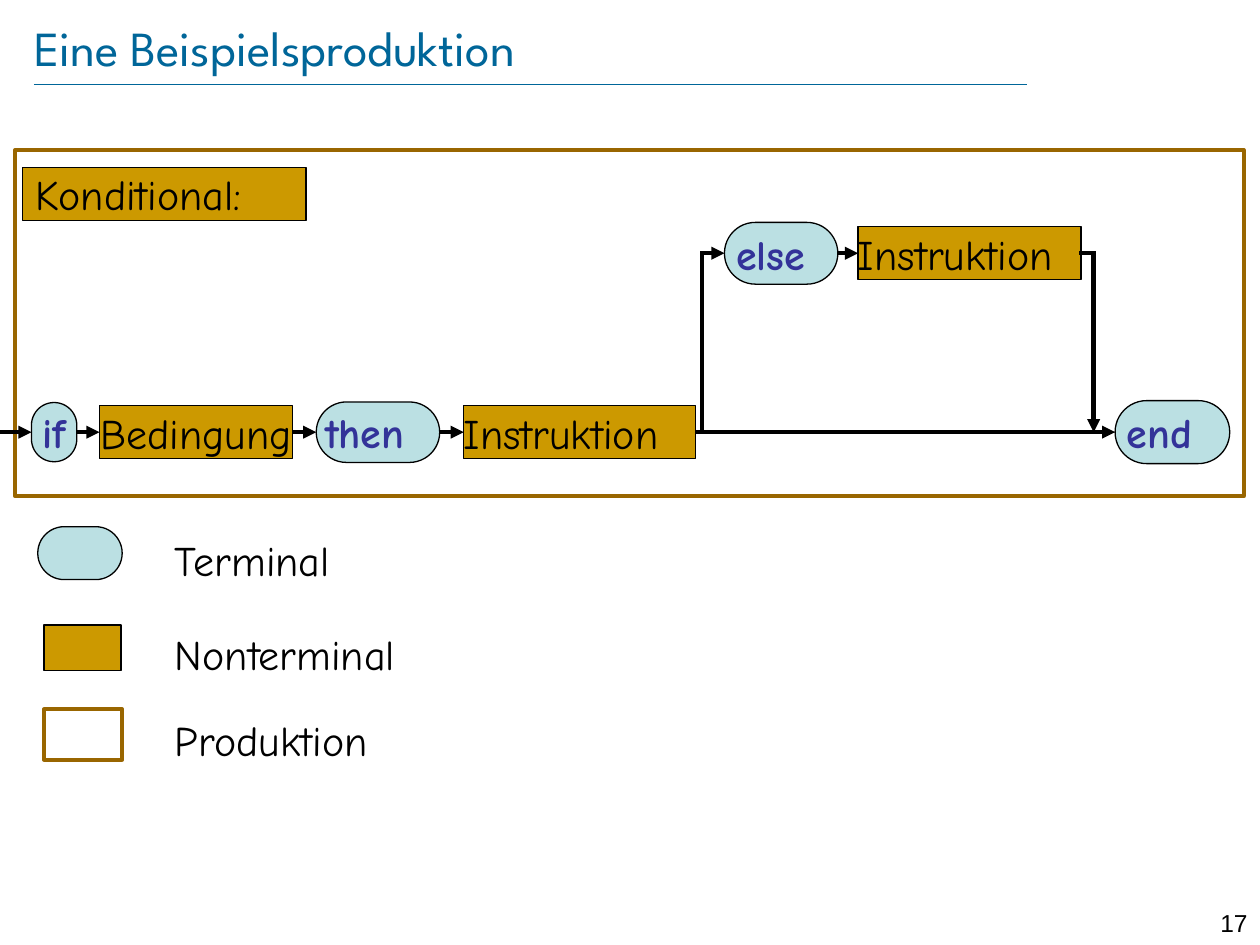
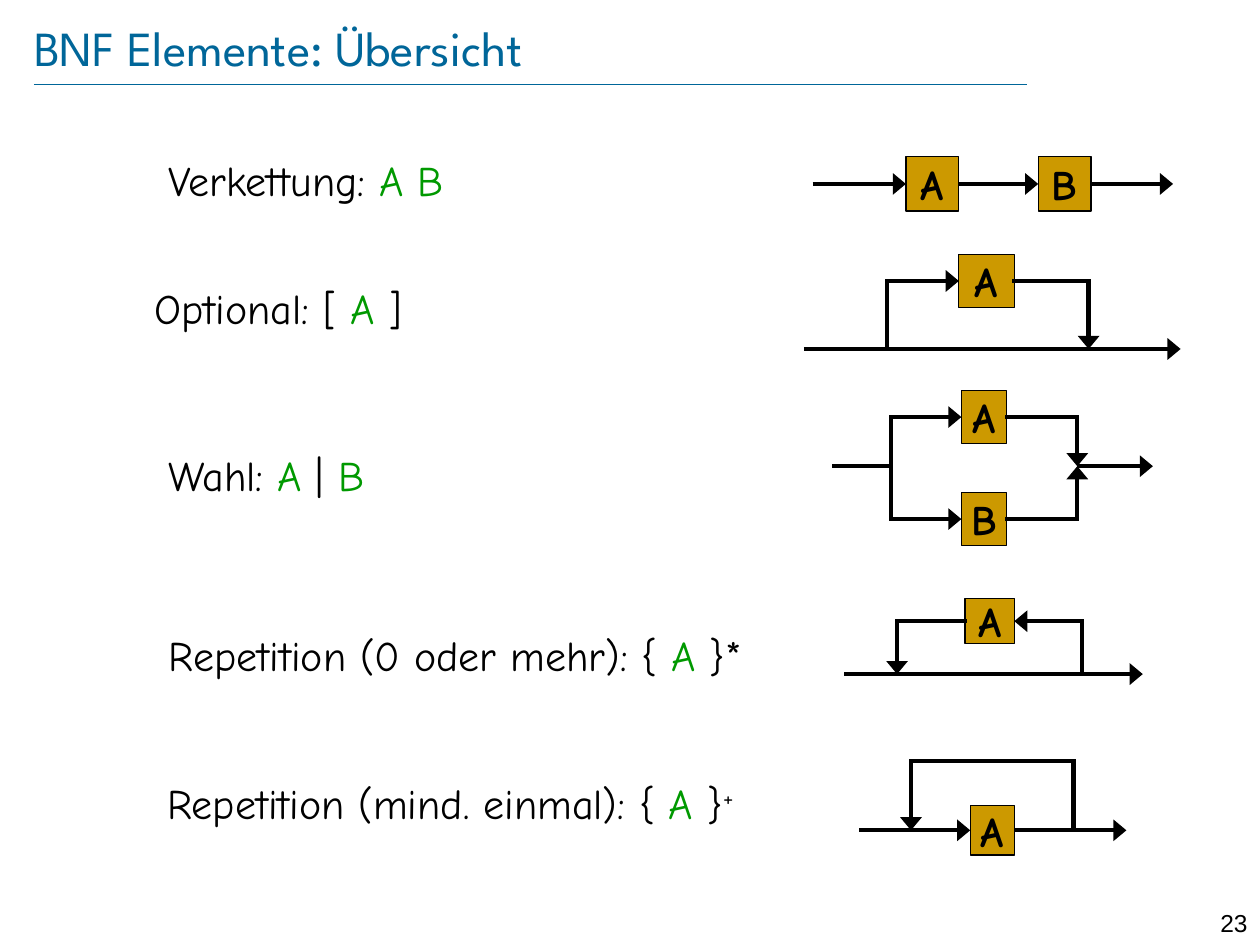
import pptx
import pptx.dml.color
import pptx.enum.shapes
import pptx.enum.text
import pptx.oxml
import pptx.oxml.ns
import pptx.util

Inches = pptx.util.Inches
Pt = pptx.util.Pt
ALIGN = pptx.enum.text.PP_ALIGN
ANCHOR = pptx.enum.text.MSO_ANCHOR
RECT = pptx.enum.shapes.MSO_SHAPE.RECTANGLE
PILL = pptx.enum.shapes.MSO_SHAPE.ROUNDED_RECTANGLE
STRAIGHT = pptx.enum.shapes.MSO_CONNECTOR.STRAIGHT
LEFT, RIGHT = 1, 3  # connection sites

BLACK, BLUE, GREEN, INDIGO = "000000", "006699", "009900", "333399"
GOLD, BROWN, PALE = "CC9900", "996600", "BBE0E3"
TITLE_FONT, BODY_FONT, NUMBER_FONT = "League Spartan", "Comic Neue", "Arial"

# Shape kind, fill, outline colour, outline width
STYLES = {
    "terminal": (PILL, PALE, BLACK, 0.75),
    "nonterminal": (RECT, GOLD, BLACK, 0.75),
    "production": (RECT, None, BROWN, 2.25),
}

# --- Slide 17 ---------------------------------------------------------
MAIN_Y, ELSE_Y = 3.43, 2.01
FRAME = (0.12, 1.19, 9.75, 2.75)
HEADING = (0.18, 1.33, 2.25, 0.42)
# Name, word, style, left, centre y, width, height, text indent (None: centred)
RULE_NODES = [
    ("if", "if", "terminal", 0.25, MAIN_Y, 0.36, 0.47, None),
    ("condition", "Bedingung", "nonterminal", 0.79, MAIN_Y, 1.53, 0.42, None),
    ("then", "then", "terminal", 2.51, MAIN_Y, 0.98, 0.48, 0),
    ("then part", "Instruktion", "nonterminal", 3.68, MAIN_Y, 1.84, 0.42, 0),
    ("else", "else", "terminal", 5.75, ELSE_Y, 0.9, 0.49, 0.02),
    ("else part", "Instruktion", "nonterminal", 6.81, ELSE_Y, 1.77, 0.42, 0),
    ("end", "end", "terminal", 8.85, MAIN_Y, 0.91, 0.5, 0.02),
]
RULE_CHAIN = ["if", "condition", "then", "then part", "end"]
RULE_ROUTES = [
    [(0, MAIN_Y), ("if", LEFT)],
    [(5.57, MAIN_Y), (5.57, ELSE_Y), ("else", LEFT)],
    [("else", RIGHT), ("else part", LEFT)],
    [("else part", RIGHT), (8.68, ELSE_Y), (8.68, MAIN_Y)],
] + [[(a, RIGHT), (b, LEFT)] for a, b in zip(RULE_CHAIN, RULE_CHAIN[1:])]

# Label, label top, style, symbol box
LEGEND = [
    ("Terminal", 4.19, "terminal", (0.3, 4.18, 0.67, 0.42)),
    ("Nonterminal", 4.94, "nonterminal", (0.35, 4.96, 0.61, 0.36)),
    ("Produktion", 5.62, "production", (0.35, 5.63, 0.62, 0.4)),
]

# --- Slide 23 ---------------------------------------------------------
# Boxes: letter -> left, centre y, width, height
ELEMENTS = [
    {
        "caption": [("Verkettung: ", BLACK), ("A B", GREEN)],
        "place": (1.06, 1.18, 2.74, 0.5),
        "boxes": {"A": (7.19, 1.46, 0.42, 0.43), "B": (8.24, 1.46, 0.42, 0.43)},
        "routes": [
            [(6.45, 1.46), ("A", LEFT)],
            [("A", RIGHT), ("B", LEFT)],
            [("B", RIGHT), (9.31, 1.46)],
        ],
    },
    {
        "caption": [("Optional: [ ", BLACK), ("A", GREEN), (" ]", BLACK)],
        "place": (1.01, 2.19, 2.4, 0.5),
        "boxes": {"A": (7.61, 2.23, 0.44, 0.42)},
        "routes": [
            [(6.38, 2.77), (9.37, 2.77)],
            [(7.04, 2.77), (7.04, 2.23), ("A", LEFT)],
            [("A", RIGHT), (8.64, 2.23), (8.64, 2.77)],
        ],
    },
    {
        "caption": [("Wahl: ", BLACK), ("A", GREEN), (" | ", BLACK), ("B", GREEN)],
        "place": (1.11, 3.52, 2.01, 0.5),
        "boxes": {"A": (7.63, 3.31, 0.36, 0.42), "B": (7.63, 4.12, 0.36, 0.42)},
        "routes": [
            [(6.62, 3.7), (7.07, 3.7), (7.07, 3.31), ("A", LEFT)],
            [(7.07, 3.7), (7.07, 4.12), ("B", LEFT)],
            [("A", RIGHT), (8.55, 3.31), (8.55, 3.7)],
            [("B", RIGHT), (8.55, 4.12), (8.55, 3.7)],
            [(8.55, 3.7), (9.15, 3.7)],
        ],
    },
    {
        "caption": [("Repetition (0 oder mehr): { ", BLACK), ("A ", GREEN),
                    ("}*", BLACK)],
        "place": (0.94, 4.95, 5.35, 0.5),
        "boxes": {"A": (7.66, 4.93, 0.39, 0.36)},
        "routes": [
            [(6.7, 5.35), (9.07, 5.35)],
            [(8.59, 5.35), (8.59, 4.93), ("A", RIGHT)],
            [("A", LEFT), (7.12, 4.93), (7.12, 5.35)],
        ],
    },
    {
        "caption": [("Repetition (mind. einmal): { ", BLACK), ("A", GREEN),
                    (" }", BLACK), ("+", BLACK, 30)],
        "place": (0.95, 6.12, 5.25, 0.5),
        "boxes": {"A": (7.7, 6.59, 0.35, 0.39)},
        "routes": [
            [(6.82, 6.59), ("A", LEFT)],
            [("A", RIGHT), (8.94, 6.59)],
            [(8.52, 6.59), (8.52, 6.04), (7.23, 6.04), (7.23, 6.59)],
        ],
    },
]


def rgb(color):
    return pptx.dml.color.RGBColor.from_string(color)


def write(shape, text, size=24, font=BODY_FONT, color=BLACK, bold=False,
          align=ALIGN.LEFT, anchor=ANCHOR.TOP, insets=(0, 0), wrap=True):
    """Fill a shape with a string or (text, colour[, raise in percent]) spans.

    insets holds the horizontal and the vertical margin.
    """
    frame = shape.text_frame
    frame.word_wrap = wrap
    frame.vertical_anchor = anchor
    frame.margin_left = frame.margin_right = Inches(insets[0])
    frame.margin_top = frame.margin_bottom = Inches(insets[1])
    para = frame.paragraphs[0]
    para.alignment = align
    spans = [(text, color)] if isinstance(text, str) else text
    for words, span_color, *raised in spans:
        span = para.add_run()
        span.text = words
        span.font.size = Pt(size)
        span.font.name = font
        span.font.bold = bold
        span.font.color.rgb = rgb(span_color)
        if raised:
            span._r.get_or_add_rPr().set("baseline", str(raised[0] * 1000))


def add_text(page, place, text, **style):
    box = page.shapes.add_textbox(*map(Inches, place))
    write(box, text, **style)


def add_symbol(page, style, place):
    kind, fill, outline, width = STYLES[style]
    shape = page.shapes.add_shape(kind, *map(Inches, place))
    shape.shadow.inherit = False
    if kind == PILL:
        shape.adjustments[0] = 0.5
    if fill:
        shape.fill.solid()
        shape.fill.fore_color.rgb = rgb(fill)
    else:
        shape.fill.background()
    shape.line.color.rgb = rgb(outline)
    shape.line.width = Pt(width)
    return shape


def add_node(page, style, left, middle, width, height, word, **text_style):
    """Add a labelled symbol whose centre lies on the height of its track."""
    shape = add_symbol(page, style, (left, middle - height / 2, width, height))
    write(shape, word, anchor=ANCHOR.MIDDLE, **text_style)
    return shape


def add_line(page, start, end, color, width):
    line = page.shapes.add_connector(STRAIGHT, *start, *end)
    line.line.color.rgb = rgb(color)
    line.line.width = Pt(width)
    line._element.spPr.append(pptx.oxml.parse_xml(
        "<a:effectLst %s/>" % pptx.oxml.ns.nsdecls("a")))
    return line


def add_route(page, stops, nodes, head_width):
    """Draw a track through points and node sides, with an arrowhead at its end."""
    def locate(stop):
        if not isinstance(stop[0], str):
            return Inches(stop[0]), Inches(stop[1])
        node, side = nodes[stop[0]], stop[1]
        x = node.left + (node.width if side == RIGHT else 0)
        return x, node.top + node.height // 2

    for start, end in zip(stops, stops[1:]):
        line = add_line(page, locate(start), locate(end), BLACK, 2.5)
        if isinstance(start[0], str):
            line.begin_connect(nodes[start[0]], start[1])
        if isinstance(end[0], str):
            line.end_connect(nodes[end[0]], end[1])
        outline = line.line._get_or_add_ln()
        if len(stops) > 2:
            outline.set("cap", "sq")
        if end is stops[-1]:
            outline.append(pptx.oxml.parse_xml(
                '<a:tailEnd %s type="triangle" w="%s" len="med"/>'
                % (pptx.oxml.ns.nsdecls("a"), head_width)))


def add_page(deck, title, number):
    page = deck.slides.add_slide(deck.slide_layouts[6])
    add_line(page, (Inches(0.27), Inches(0.67)), (Inches(8.15), Inches(0.67)),
             BLUE, 0.25)
    add_text(page, (0.27, 0.13, 8.69, 0.48), title, size=28, font=TITLE_FONT,
             color=BLUE, anchor=ANCHOR.MIDDLE)
    add_text(page, (9.45, 7.16, 0.55, 0.24), number, size=14, font=NUMBER_FONT,
             align=ALIGN.RIGHT, insets=(0.1, 0.05))
    return page


def build_production(deck):
    page = add_page(deck, "Eine Beispielsproduktion", "17")
    add_symbol(page, "production", FRAME)
    heading = add_symbol(page, "nonterminal", HEADING)
    write(heading, "Konditional:", anchor=ANCHOR.MIDDLE, insets=(0.1, 0))

    nodes = {}
    for name, word, style, left, middle, width, height, indent in RULE_NODES:
        centred = indent is None
        terminal = style == "terminal"
        nodes[name] = add_node(
            page, style, left, middle, width, height, word,
            color=INDIGO if terminal else BLACK, bold=terminal,
            align=ALIGN.CENTER if centred else ALIGN.LEFT,
            insets=(indent or 0, 0), wrap=not centred)
    for stops in RULE_ROUTES:
        add_route(page, stops, nodes, "med")

    for label, top, style, place in LEGEND:
        add_symbol(page, style, place)
        add_text(page, (1.29, top, 2.42, 0.5), label, insets=(0.1, 0.05))


def build_overview(deck):
    page = add_page(deck, "BNF Elemente: Übersicht", "23")
    for element in ELEMENTS:
        add_text(page, element["place"], element["caption"],
                 align=ALIGN.CENTER, insets=(0.1, 0.05), wrap=False)
        nodes = {
            letter: add_node(page, "nonterminal", *place, letter, bold=True,
                             align=ALIGN.CENTER, wrap=False)
            for letter, place in element["boxes"].items()
        }
        for stops in element["routes"]:
            add_route(page, stops, nodes, "lg")


def main():
    deck = pptx.Presentation()
    deck.slide_width, deck.slide_height = Inches(10), Inches(7.5)
    build_production(deck)
    build_overview(deck)
    deck.save("out.pptx")


if __name__ == "__main__":
    main()
